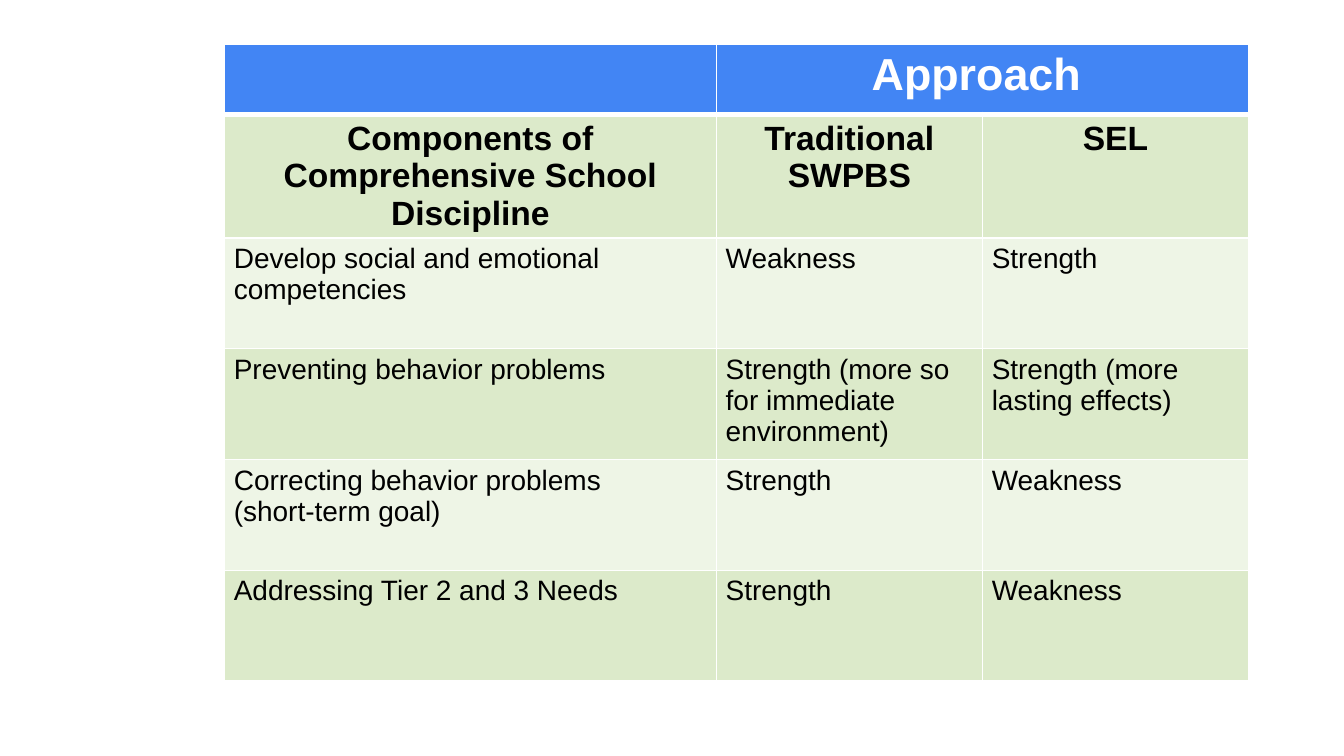
from pptx import Presentation
from pptx import util as u
from pptx.dml.color import RGBColor
from pptx.enum import text
from pptx.oxml import parse_xml
from pptx.oxml.ns import nsdecls

# Content: a line break inside a cell starts a new paragraph
ROWS = [
    ("", "Approach ", ""),
    ("Components of Comprehensive School Discipline", "Traditional\nSWPBS", "SEL"),
    ("Develop social and emotional competencies", "Weakness", "Strength"),
    ("Preventing behavior problems",
     "Strength (more so for immediate environment)",
     "Strength (more lasting effects)"),
    ("Correcting behavior problems\n(short-term goal)", "Strength", "Weakness"),
    ("Addressing Tier 2 and 3 Needs", "Strength", "Weakness"),
]
COLORS = {
    "header": "4285F4",
    "band_dark": "DCEACA",
    "band_light": "EEF5E6",
    "white": "FFFFFF",
    "black": "000000",
}
COLUMN_WIDTHS = [3.66, 1.98, 1.98]
BODY_HEIGHT = 3.3
ROW_HEIGHTS = [0.52, 0.74] + [BODY_HEIGHT / 4] * 4
LEFT, TOP = 1.67, 0.33

# Text format of the two heading rows and of the body rows
HEADINGS = [
    dict(size=24, color="white", bold=True, centered=True),
    dict(size=18, color="black", bold=True, centered=True),
]
BODY = dict(size=15, color="black", bold=False, centered=False)


def write_text(cell, content, *, size, color, bold, centered):
    cell.margin_left = cell.margin_right = u.Inches(0.07)
    cell.margin_top = cell.margin_bottom = u.Inches(0.04)
    cell.text_frame.text = content
    for paragraph in cell.text_frame.paragraphs:
        paragraph.alignment = text.PP_ALIGN.CENTER if centered else text.PP_ALIGN.LEFT
        for run in paragraph.runs:
            run.font.name = "Arial"
            run.font.size = u.Pt(size)
            run.font.bold = bold
            run.font.color.rgb = RGBColor.from_string(COLORS[color])


def draw_borders(cell, **widths):
    properties = cell._tc.get_or_add_tcPr()
    for side in "LRTB":
        width = u.Pt(widths.get(side, 1))
        properties.append(parse_xml(
            f'<a:ln{side} {nsdecls("a")} w="{width}"><a:solidFill>'
            f'<a:srgbClr val="{COLORS["white"]}"/></a:solidFill></a:ln{side}>'))


def fill_cell(cell, color):
    cell.fill.solid()
    cell.fill.fore_color.rgb = RGBColor.from_string(COLORS[color])


# Widescreen slide, 16:9
presentation = Presentation()
presentation.slide_width = u.Inches(10)
presentation.slide_height = u.Inches(10 * 9 / 16)
slide = presentation.slides.add_slide(presentation.slide_layouts[6])

# Table grid
table = slide.shapes.add_table(
    len(ROWS), len(COLUMN_WIDTHS), u.Inches(LEFT), u.Inches(TOP),
    u.Inches(sum(COLUMN_WIDTHS)), u.Inches(sum(ROW_HEIGHTS))).table
for column, width in zip(table.columns, COLUMN_WIDTHS):
    column.width = u.Inches(width)
for row, height in zip(table.rows, ROW_HEIGHTS):
    row.height = u.Inches(height)
table.cell(0, 1).merge(table.cell(0, 2))

# Cells: blue header, then alternating green bands
for row_index, contents in enumerate(ROWS):
    style = HEADINGS[row_index] if row_index < len(HEADINGS) else BODY
    band = "band_dark" if row_index % 2 else "band_light"
    rule = {0: {"B": 3}, 1: {"T": 3}}.get(row_index, {})
    for column_index, content in enumerate(contents):
        cell = table.cell(row_index, column_index)
        write_text(cell, content, **style)
        draw_borders(cell, **rule)
        fill_cell(cell, band if row_index else "header")

presentation.save("out.pptx")
